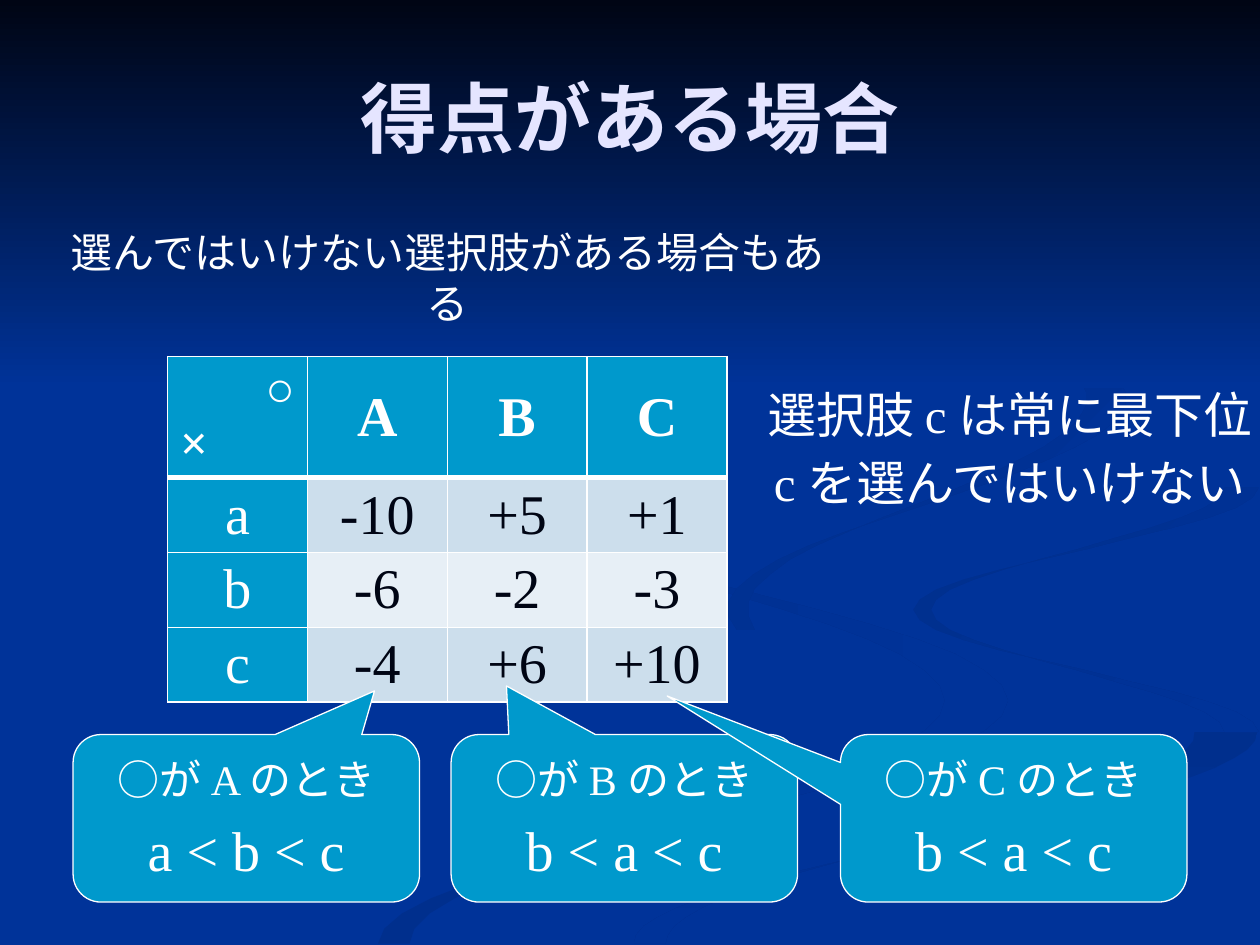
import math

from lxml import etree
from pptx import Presentation
from pptx import util as u
from pptx.dml.color import RGBColor
from pptx.enum import shapes, text
from pptx.oxml import ns

FONT = "Times New Roman"
BLUE = RGBColor(0x00, 0x33, 0x99)
NIGHT = RGBColor(0x00, 0x05, 0x14)
SHADE = RGBColor(0x00, 0x2F, 0x8D)
CYAN = RGBColor(0x00, 0x99, 0xCC)
WHITE = RGBColor(0xFF, 0xFF, 0xFF)
LAVENDER = RGBColor(0xE5, 0xE5, 0xFF)
BANDS = RGBColor(0xCC, 0xDE, 0xEC), RGBColor(0xE7, 0xEF, 0xF6)

SCORES = [("a", "-10", "+5", "+1"), ("b", "-6", "-2", "-3"), ("c", "-4", "+6", "+10")]
CASES = [
    ("○が A のとき", "a < b < c", 0.58, (0.37, -0.76)),
    ("○が B のとき", "b < a < c", 3.58, (-0.34, -0.79)),
    ("○が C のとき", "b < a < c", 6.67, (-1, -0.73)),
]


def inches(*lengths):
    """Turn numbers into inch lengths."""
    return [u.Inches(length) for length in lengths]


def write(frame, lines, color=WHITE, bold=False, spacing=0.2):
    """Fill a text frame with centred (wording, size) paragraphs."""
    frame.word_wrap = True
    for index, (words, size) in enumerate(lines):
        para = frame.add_paragraph() if index else frame.paragraphs[0]
        para.text = words
        para.alignment = text.PP_ALIGN.CENTER
        para.space_before = u.Pt(size * spacing)
        para.font.name = FONT
        para.font.size = u.Pt(size)
        para.font.bold = bold
        para.font.color.rgb = color


def shade(shape, first, last, angle):
    """Give a backdrop shape a two-colour gradient and no outline."""
    shape.shadow.inherit = False
    shape.line.fill.background()
    shape.fill.gradient()
    shape.fill.gradient_angle = angle
    for stop, color in zip(shape.fill.gradient_stops, (first, last)):
        stop.color.rgb = color


def draw_ribbon(page, box, phase, turns, angle, steps=24):
    """Draw a winding ribbon that swings from side to side of its box."""
    left, top, width, height = box
    outer, inner = [], []
    for step in range(steps + 1):
        share = step / steps
        swing = 0.5 - 0.5 * math.cos(math.pi * (phase + turns * share))
        y = top + height * share
        outer.append((100 * (left + width * swing), 100 * y))
        inner.append((100 * (left + width * (0.05 + 0.85 * swing)), 100 * y))
    points = outer + inner[::-1]
    builder = page.shapes.build_freeform(*points[0], scale=u.Inches(0.01))
    builder.add_line_segments(points[1:], close=True)
    shade(builder.convert_to_shape(), SHADE, BLUE, angle)


def draw_backdrop(page):
    """Lay faint ribbons and a night sky over the blue background."""
    page.background.fill.solid()
    page.background.fill.fore_color.rgb = BLUE
    draw_ribbon(page, (3, 4.59, 5, 2.9), 0.5, 1.5, 0)
    draw_ribbon(page, (5.03, 5.81, 4.95, 1.68), 1, 1, 270)
    draw_ribbon(page, (7.25, 3.87, 2.74, 1.94), 1, 2, 315)
    draw_ribbon(page, (5.77, 2.33, 3.17, 2.67), 0.5, 1.6, 315)
    sky = page.shapes.add_shape(shapes.MSO_SHAPE.RECTANGLE, *inches(0, 0, 10, 3.08))
    shade(sky, NIGHT, BLUE, 270)


def place_title(page, words, box):
    """Format the title placeholder and bring it in front of the backdrop."""
    title = page.shapes.title
    title.element.getparent().append(title.element)
    title.left, title.top, title.width, title.height = inches(*box)
    title.text_frame.vertical_anchor = text.MSO_ANCHOR.MIDDLE
    write(title.text_frame, [(words, 44)], LAVENDER, True, 0)


def place_note(page, lines, box):
    """Add a centred white text box."""
    note = page.shapes.add_textbox(*inches(*box))
    write(note.text_frame, lines)


def style_cell(cell, color, bottom=1):
    """Give a cell its fill, anchor and white borders."""
    cell.vertical_anchor = text.MSO_ANCHOR.MIDDLE
    properties = cell._tc.get_or_add_tcPr()
    for side, width in (("L", 1), ("R", 1), ("T", 1), ("B", bottom)):
        line = etree.SubElement(properties, ns.qn("a:ln" + side), w=str(u.Pt(width)))
        solid = etree.SubElement(line, ns.qn("a:solidFill"))
        etree.SubElement(solid, ns.qn("a:srgbClr"), val=str(WHITE))
    cell.fill.solid()
    cell.fill.fore_color.rgb = color


def place_table(page, box, head):
    """Build the score table with a header row and equal rows below it."""
    frame = page.shapes.add_table(len(SCORES) + 1, 4, *inches(*box))
    grid = frame.table
    row = (box[3] - head) / len(SCORES)
    for index, line in enumerate(grid.rows):
        line.height = u.Inches(row if index else head)
    corner = grid.cell(0, 0)
    style_cell(corner, CYAN, 3)
    write(corner.text_frame, [("○", 28), ("×", 28)], bold=True, spacing=0)
    for para, side in zip(corner.text_frame.paragraphs, (text.PP_ALIGN.RIGHT, text.PP_ALIGN.LEFT)):
        para.alignment = side
    for column, letter in enumerate("ABC", 1):
        style_cell(grid.cell(0, column), CYAN, 3)
        write(grid.cell(0, column).text_frame, [(letter, 32)], bold=True, spacing=0)
    for index, values in enumerate(SCORES):
        for column, value in enumerate(values):
            cell = grid.cell(index + 1, column)
            style_cell(cell, BANDS[index % 2] if column else CYAN)
            write(cell.text_frame, [(value, 32)], NIGHT if column else WHITE, spacing=0)


def place_callout(page, heading, order, pointer, box):
    """Add a rounded callout with a heading and a ranking."""
    callout = page.shapes.add_shape(shapes.MSO_SHAPE.ROUNDED_RECTANGULAR_CALLOUT, *inches(*box))
    callout.shadow.inherit = False
    callout.fill.solid()
    callout.fill.fore_color.rgb = CYAN
    callout.line.color.rgb = WHITE
    callout.line.width = u.Pt(0.75)
    callout.adjustments[0], callout.adjustments[1] = pointer
    callout.text_frame.vertical_anchor = text.MSO_ANCHOR.MIDDLE
    write(callout.text_frame, [(heading, 24), (order, 32)])


def main():
    """Build and save the slide."""
    deck = Presentation()
    deck.slide_width, deck.slide_height = inches(10, 7.5)
    page = deck.slides.add_slide(deck.slide_layouts[5])
    draw_backdrop(page)
    place_title(page, "得点がある場合", (0.5, 0.3, 9, 1.25))
    place_table(page, (1.33, 2.83, 4.44, 2.73), 0.95)
    for heading, order, left, pointer in CASES:
        place_callout(page, heading, order, pointer, (left, 5.83, 2.75, 1.33))
    place_note(page, [("選択肢 c は常に最下位", 28), ("c を選んではいけない", 28)], (5.98, 3, 4.07, 1.14))
    place_note(page, [("選んではいけない選択肢がある場合もある", 24)], (0.42, 1.75, 6.27, 0.5))
    deck.save("out.pptx")


if __name__ == "__main__":
    main()
